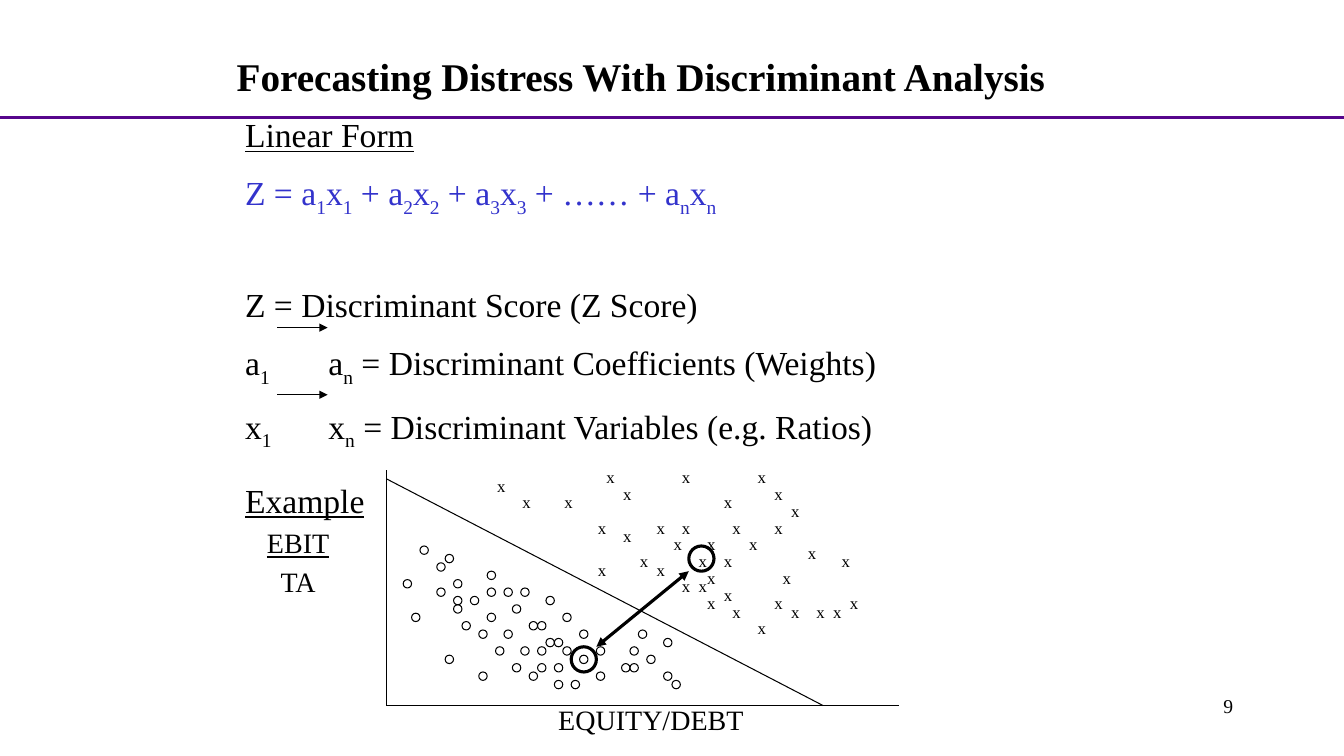
import pptx
import pptx.util
import pptx.dml.color
import pptx.enum.shapes
import pptx.enum.text
import pptx.oxml
import pptx.oxml.ns

BLACK = pptx.dml.color.RGBColor(0x00, 0x00, 0x00)
BLUE = pptx.dml.color.RGBColor(0x33, 0x33, 0xCC)
PURPLE = pptx.dml.color.RGBColor(0x57, 0x06, 0x8C)
FONT = "Times New Roman"
ALIGN = pptx.enum.text.PP_ALIGN
MIDDLE = pptx.enum.text.MSO_ANCHOR.MIDDLE
UNIT = 2.54 / 12

TITLE = "Forecasting Distress With Discriminant Analysis"
BODY = [
    ("Linear Form", dict(under=True)),
    ("Z = a_1x_1 + a_2x_2 + a_3x_3 + …… + a_nx_n", dict(color=BLUE, before=12.5)),
    ("Z = Discriminant Score (Z Score)", dict(before=47.5)),
    ("a_1\ta_n = Discriminant Coefficients (Weights)", dict(before=12.5, tab=2.1)),
    ("x_1\tx_n = Discriminant Variables (e.g. Ratios)", dict(before=12.5, tab=2.1)),
    ("Example", dict(under=True, before=13, lines=1.25)),
]
RATIO = [
    ("EBIT", dict(under=True)),
    ("TA", dict(before=11, lines=0.65)),
]

DOTS = {
    65: [50], 66: [53], 67: [52], 68: [58], 69: [48, 54],
    70: [52, 58, 60, 62], 71: [54, 56, 65], 72: [54, 61],
    73: [49, 58, 67], 74: [55, 63, 64], 75: [57, 60, 69, 76],
    76: [65, 66, 79], 77: [59, 62, 64, 67, 71, 75],
    78: [53, 69, 77], 79: [61, 64, 66, 74, 75],
    80: [57, 63, 71, 79], 81: [66, 68, 80],
}
MARKS = {
    55: [71, 80, 89], 56: [58], 57: [73, 91], 58: [61, 66, 85], 59: [93],
    61: [70, 77, 80, 86, 91], 62: [73], 63: [79, 83, 88], 64: [95],
    65: [75, 82, 85, 99], 66: [70, 77], 67: [83, 92], 68: [80, 82],
    69: [85], 70: [83, 91, 100], 71: [86, 93, 96, 98], 73: [89],
}
RINGS = [(68, 77), (82, 65)]
LINES = [
    ((0, 14), (160, 14), dict(color=PURPLE, width=2.25)),
    ((33, 39), (39, 39), dict(ends=["tailEnd"])),
    ((33, 47), (39, 47), dict(ends=["tailEnd"])),
    ((46, 56), (46, 84), {}),
    ((46, 84), (107, 84), {}),
    ((46, 57), (98, 84), {}),
    ((71, 77), (82, 68), dict(width=2.25, ends=["headEnd", "tailEnd"])),
]

deck = pptx.Presentation()
deck.slide_width = pptx.util.Cm(160 * UNIT)
deck.slide_height = pptx.util.Cm(90 * UNIT)
slide = deck.slides.add_slide(deck.slide_layouts[6])


def grid(*spots):
    return [pptx.util.Cm(spot * UNIT) for spot in spots]


def write(para, text, size=24, color=BLACK, bold=False, under=False,
          align=ALIGN.LEFT, before=0, lines=1, tab=None):
    if tab:
        stops = pptx.oxml.parse_xml(
            '<a:tabLst %s><a:tab pos="%d" algn="l"/></a:tabLst>'
            % (pptx.oxml.ns.nsdecls("a"), pptx.util.Cm(tab)))
        para._p.get_or_add_pPr().append(stops)
    para.alignment = align
    para.space_before = pptx.util.Pt(before)
    para.line_spacing = lines
    first, *rest = text.split("_")
    parts = [(first, False)]
    for part in rest:
        parts += [(part[0], True), (part[1:], False)]
    for part, low in parts:
        if not part:
            continue
        run = para.add_run()
        run.text = part
        font = run.font
        font.name, font.size = FONT, pptx.util.Pt(size)
        font.bold, font.underline = bold, under
        font.color.rgb = color
        if low:
            run._r.get_or_add_rPr().set("baseline", "-25000")


def label(rows, spot, anchor=pptx.enum.text.MSO_ANCHOR.TOP, **form):
    frame = slide.shapes.add_textbox(*grid(*spot)).text_frame
    frame.word_wrap = True
    frame.vertical_anchor = anchor
    for num, (text, extra) in enumerate(rows):
        para = frame.add_paragraph() if num else frame.paragraphs[0]
        write(para, text, **{**form, **extra})


def draw(start, end, color=BLACK, width=0.75, ends=()):
    line = slide.shapes.add_connector(
        pptx.enum.shapes.MSO_CONNECTOR.STRAIGHT, *grid(*start, *end))
    line.line.color.rgb = color
    line.line.width = pptx.util.Pt(width)
    pen = line.line._get_or_add_ln()
    for end_tag in ends:
        pptx.oxml.ns.qn("a:ln")
        pen.append(pptx.oxml.parse_xml(
            '<a:%s %s type="triangle"/>' % (end_tag, pptx.oxml.ns.nsdecls("a"))))
    line._element.spPr.append(pptx.oxml.parse_xml(
        '<a:effectLst %s/>' % pptx.oxml.ns.nsdecls("a")))


def ring(left, top, side, width):
    oval = slide.shapes.add_shape(
        pptx.enum.shapes.MSO_SHAPE.OVAL, *grid(left, top, side, side))
    oval.shadow.inherit = False
    oval.fill.background()
    oval.line.color.rgb = BLACK
    oval.line.width = pptx.util.Pt(width)


for start, end, form in LINES:
    draw(start, end, **form)

label([(TITLE, {})], (27, 5, 109, 8), anchor=MIDDLE, size=28, bold=True)
label(BODY, (28, 13, 108, 46.5))
label(RATIO, (29, 62, 13, 9.8), size=20, align=ALIGN.CENTER)
label([("EQUITY/DEBT", {})], (48, 83, 59, 5.2), size=20, align=ALIGN.CENTER)
label([("9", {})], (114.7, 82, 33.3, 6), size=14, align=ALIGN.RIGHT)

for top, lefts in DOTS.items():
    for left in lefts:
        ring(left, top, 1, 0.75)
for top, lefts in MARKS.items():
    for left in lefts:
        label([("x", {})], (left, top, 3, 3.6), size=12)
for left, top in RINGS:
    ring(left, top, 3, 2.25)

deck.save("out.pptx")
